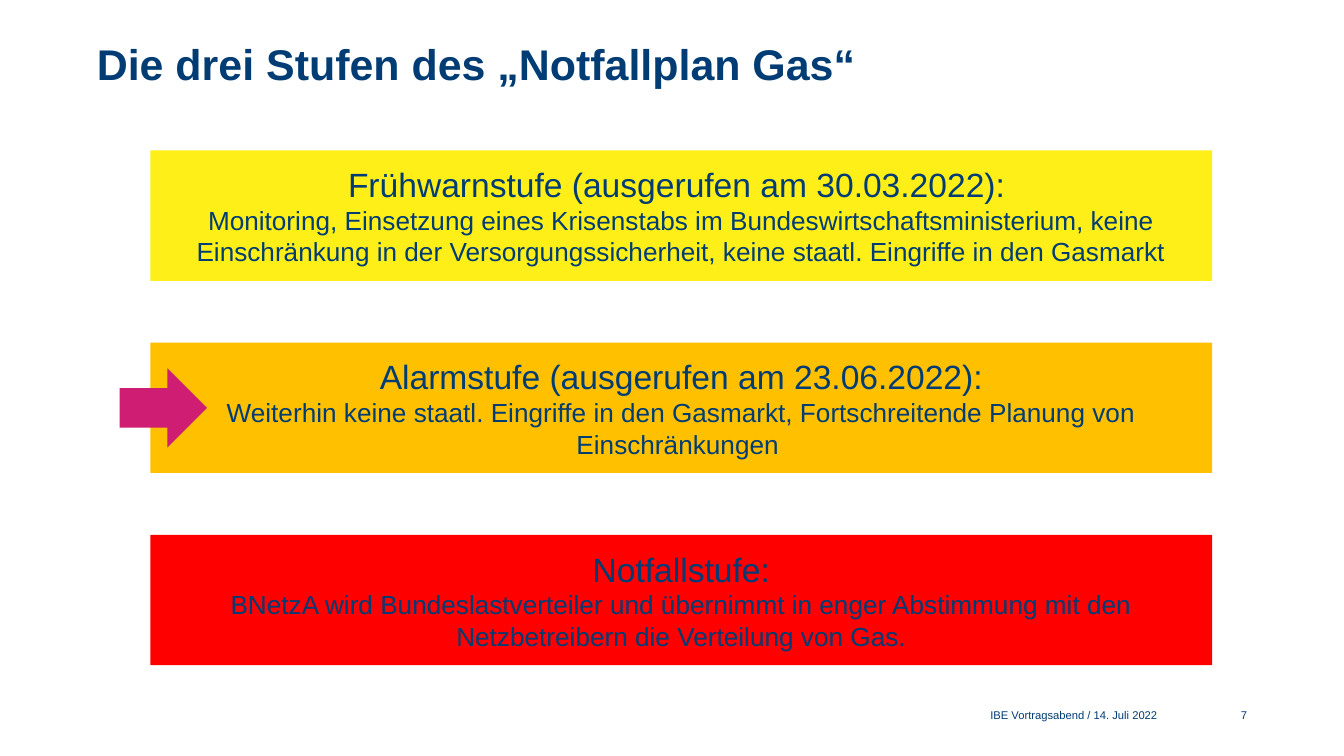
from pptx import Presentation
from pptx.dml.color import RGBColor
from pptx.enum.shapes import MSO_SHAPE
from pptx.enum.text import MSO_ANCHOR, PP_ALIGN
from pptx.util import Inches, Pt

COLORS = {
    "navy": "013C74",
    "yellow": "FFEF18",
    "orange": "FFC000",
    "red": "FF0000",
    "magenta": "D01D74",
}
FONT = "Arial"

STAGES = [
    ("yellow", "Frühwarnstufe (ausgerufen am 30.03.2022): ",
     "Monitoring, Einsetzung eines Krisenstabs im Bundeswirtschaftsministerium, "
     "keine Einschränkung in der Versorgungssicherheit, "
     "keine staatl. Eingriffe in den Gasmarkt"),
    ("orange", "Alarmstufe (ausgerufen am 23.06.2022):",
     "Weiterhin keine staatl. Eingriffe in den Gasmarkt, "
     "Fortschreitende Planung von Einschränkungen "),
    ("red", "Notfallstufe:",
     "BNetzA wird Bundeslastverteiler und übernimmt in enger Abstimmung "
     "mit den Netzbetreibern die Verteilung von Gas."),
]


class SlideBuilder:
    """Holds the style and the current page."""

    def __init__(self, page):
        self.page = page

    def style(self, para, text, size, align, bold=False):
        para.text = text
        para.alignment = align
        para.font.name = FONT
        para.font.size = Pt(size)
        para.font.bold = bold
        para.font.color.rgb = RGBColor.from_string(COLORS["navy"])

    def text(self, area, text, size, align, anchor, bold=False, spacing=None):
        box = self.page.shapes.add_textbox(*map(Inches, area))
        frame = box.text_frame
        frame.word_wrap = True
        frame.vertical_anchor = anchor
        frame.margin_left = frame.margin_right = 0
        frame.margin_top = frame.margin_bottom = 0
        para = frame.paragraphs[0]
        self.style(para, text, size, align, bold)
        if spacing:
            para.line_spacing = Pt(spacing)

    def shape(self, kind, area, color):
        shape = self.page.shapes.add_shape(kind, *map(Inches, area))
        shape.shadow.inherit = False
        shape.fill.solid()
        shape.fill.fore_color.rgb = RGBColor.from_string(COLORS[color])
        shape.line.fill.background()
        return shape

    def stage(self, area, color, heading, detail):
        frame = self.shape(MSO_SHAPE.RECTANGLE, area, color).text_frame
        frame.word_wrap = True
        frame.vertical_anchor = MSO_ANCHOR.MIDDLE
        self.style(frame.paragraphs[0], heading, 18, PP_ALIGN.CENTER)
        self.style(frame.add_paragraph(), detail, 14, PP_ALIGN.CENTER)


def main():
    # Page in 16:9
    deck = Presentation()
    deck.slide_width = Inches(10)
    deck.slide_height = Inches(10 * 9 / 16)
    builder = SlideBuilder(deck.slides.add_slide(deck.slide_layouts[6]))

    # Title
    builder.text((0.72, 0.3, 7.88, 0.43), "Die drei Stufen des „Notfallplan Gas“",
                 23, PP_ALIGN.LEFT, MSO_ANCHOR.TOP, bold=True, spacing=26)

    # Three stages, evenly stacked
    for index, (color, heading, detail) in enumerate(STAGES):
        builder.stage((1.12, 1.12 + index * 1.43, 7.9, 0.97), color, heading, detail)

    # Marker for the current stage
    builder.shape(MSO_SHAPE.RIGHT_ARROW, (0.89, 2.74, 0.65, 0.59), "magenta")

    # Footer and page number
    for left, width, text in [(4.86, 3.75, "IBE Vortragsabend / 14. Juli 2022"),
                              (8.91, 0.37, "7")]:
        builder.text((left, 5.25, width, 0.12), text,
                     6, PP_ALIGN.RIGHT, MSO_ANCHOR.BOTTOM)

    deck.save("out.pptx")


if __name__ == "__main__":
    main()
